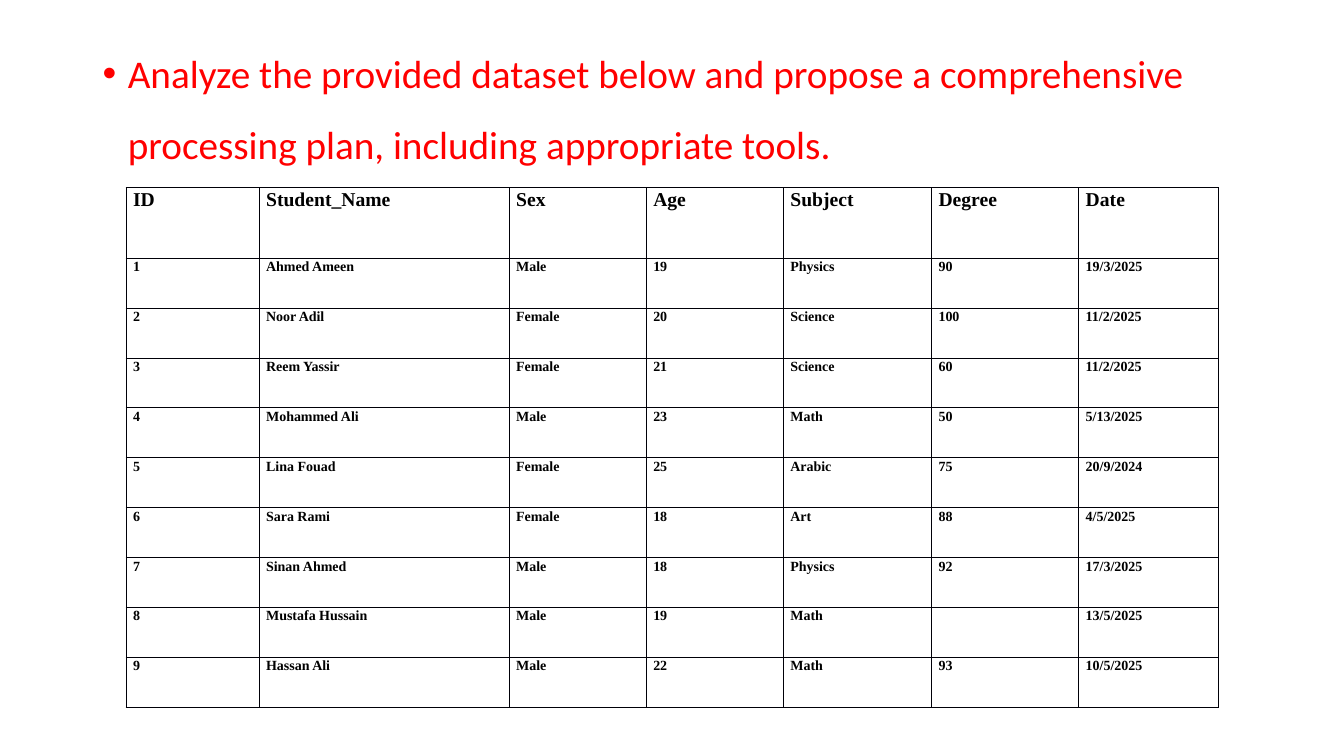
from lxml import etree
from pptx import Presentation
from pptx.dml.color import RGBColor
from pptx.enum.text import PP_ALIGN
from pptx.oxml import parse_xml
from pptx.oxml.ns import nsdecls, qn
from pptx.util import Inches, Pt

JUSTIFY = PP_ALIGN.JUSTIFY
COLORS = {"task": "FF0000", "text": "000000", "border": "000008"}
TASK = ("Analyze the provided dataset below and propose a comprehensive "
        "processing plan, including appropriate tools.")
COLUMN_WIDTHS = [1.32, 2.48, 1.36, 1.36, 1.47, 1.46, 1.38]
HEADER_HEIGHT = 0.7
STUDENTS = [
    ["ID", "Student_Name", "Sex", "Age", "Subject", "Degree", "Date"],
    ["1", "Ahmed Ameen", "Male", "19", "Physics", "90", "19/3/2025"],
    ["2", "Noor Adil", "Female", "20", "Science", "100", "11/2/2025"],
    ["3", "Reem Yassir", "Female", "21", "Science", "60", "11/2/2025"],
    ["4", "Mohammed Ali", "Male", "23", "Math", "50", "5/13/2025"],
    ["5", "Lina Fouad", "Female", "25", "Arabic", "75", "20/9/2024"],
    ["6", "Sara Rami", "Female", "18", "Art", "88", "4/5/2025"],
    ["7", "Sinan Ahmed", "Male", "18", "Physics", "92", "17/3/2025"],
    ["8", "Mustafa Hussain", "Male", "19", "Math", "", "13/5/2025"],
    ["9", "Hassan Ali", "Male", "22", "Math", "93", "10/5/2025"],
]


def set_font(paragraph, name, size, color, bold=False):
    """Set the font of a whole paragraph."""
    font = paragraph.font
    font.name, font.size, font.bold = name, Pt(size), bold
    font.color.rgb = RGBColor.from_string(COLORS[color])


def add_task(slide, left, top, width, height):
    """Place the bulleted task statement in the given box."""
    frame = slide.shapes.add_textbox(
        Inches(left), Inches(top), Inches(width), Inches(height)).text_frame
    frame.word_wrap = True
    task = frame.paragraphs[0]
    task.text = TASK
    task.line_spacing = 1.5
    properties = task._p.get_or_add_pPr()
    properties.set("marL", str(Inches(0.25)))
    properties.set("indent", str(Inches(-0.25)))
    etree.SubElement(properties, qn("a:buFont")).set("typeface", "Arial")
    etree.SubElement(properties, qn("a:buChar")).set("char", "•")
    set_font(task, "Calibri", 28, "task")


def style_cell(cell, size):
    """Give a cell thin borders, no fill and bold justified text."""
    properties = cell._tc.get_or_add_tcPr()
    for side in ("lnL", "lnR", "lnT", "lnB"):
        properties.append(parse_xml(
            f'<a:{side} {nsdecls("a")} w="{Pt(0.5)}"><a:solidFill>'
            f'<a:srgbClr val="{COLORS["border"]}"/></a:solidFill></a:{side}>'))
    cell.fill.background()
    cell.margin_left = cell.margin_right = Inches(0.07)
    cell.margin_top = cell.margin_bottom = 0
    paragraph = cell.text_frame.paragraphs[0]
    paragraph.alignment = JUSTIFY
    paragraph.line_spacing = 1.07
    paragraph.space_after = Pt(8)
    set_font(paragraph, "Times New Roman", size, "text", bold=True)


def add_students(slide, left, top, width, height):
    """Place the student table in the given box."""
    table = slide.shapes.add_table(
        len(STUDENTS), len(COLUMN_WIDTHS), Inches(left), Inches(top),
        Inches(width), Inches(height)).table
    table.first_row = table.horz_banding = False
    scale = width / sum(COLUMN_WIDTHS)
    for column, share in zip(table.columns, COLUMN_WIDTHS):
        column.width = Inches(share * scale)
    student_height = (height - HEADER_HEIGHT) / (len(STUDENTS) - 1)
    for index, student in enumerate(STUDENTS):
        row = table.rows[index]
        row.height = Inches(student_height if index else HEADER_HEIGHT)
        for cell, value in zip(row.cells, student):
            cell.text = value
            style_cell(cell, 10 if index else 14)


def main():
    """Build and save the slide."""
    deck = Presentation()
    deck.slide_width, deck.slide_height = Inches(13.33), Inches(7.5)
    slide = deck.slides.add_slide(deck.slide_layouts[6])
    add_task(slide, 0.92, 0.21, 11.5, 6.55)
    add_students(slide, 1.25, 1.86, 10.83, 5.16)
    deck.save("out.pptx")


if __name__ == "__main__":
    main()
